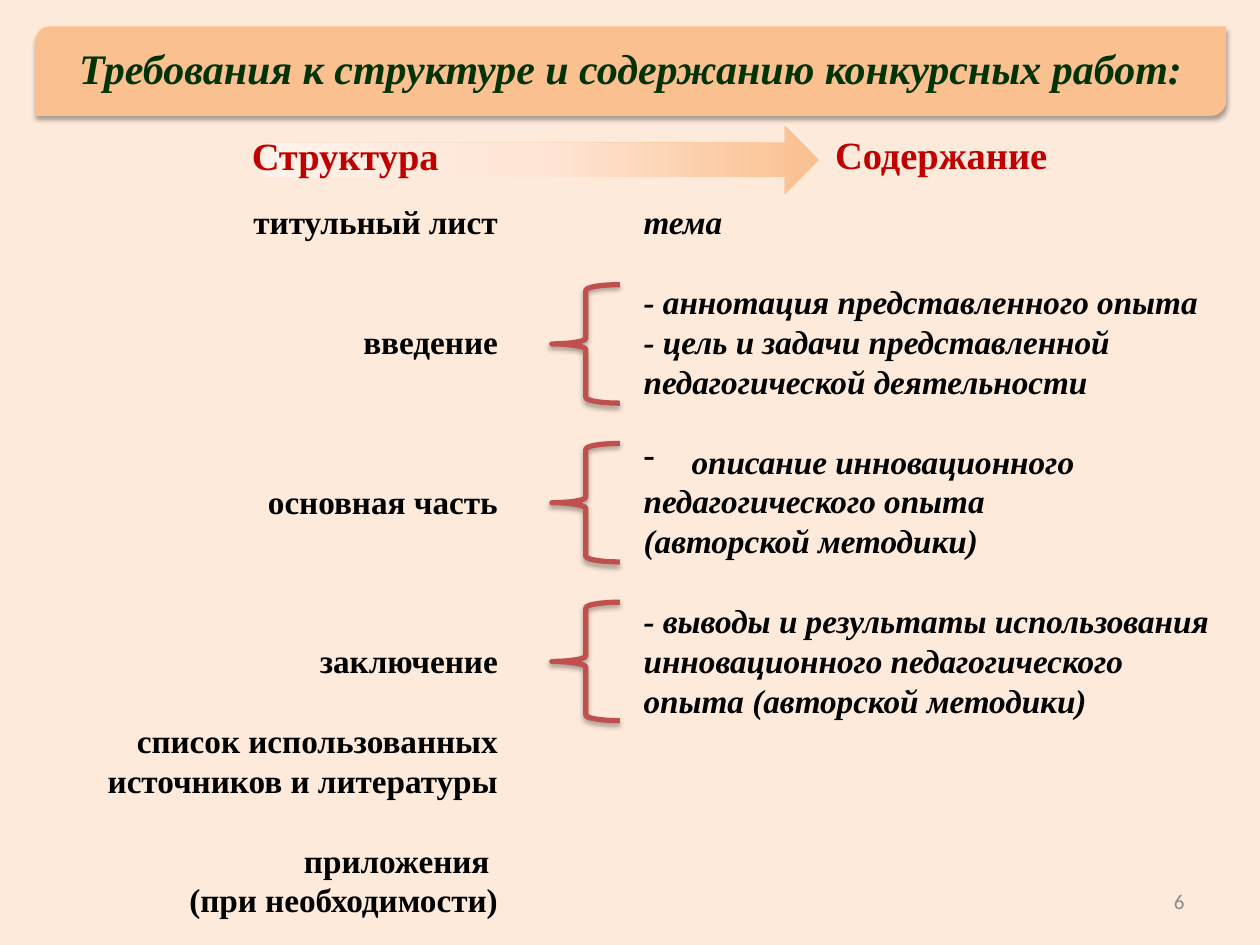
from dataclasses import dataclass

import lxml.etree
import pptx
import pptx.dml.color
import pptx.enum.shapes
import pptx.enum.text
import pptx.oxml
import pptx.oxml.ns
import pptx.util

Inches = pptx.util.Inches
Pt = pptx.util.Pt
RGBColor = pptx.dml.color.RGBColor
Shape = pptx.enum.shapes.MSO_SHAPE
Align = pptx.enum.text.PP_ALIGN
Anchor = pptx.enum.text.MSO_ANCHOR
qn = pptx.oxml.ns.qn

CREAM = RGBColor(0xFD, 0xEA, 0xDA)
PEACH = RGBColor(0xFA, 0xC0, 0x90)
BRICK = RGBColor(0xC0, 0x50, 0x4D)
RED = RGBColor(0xC0, 0x00, 0x00)
GREEN = RGBColor(0x00, 0x33, 0x00)
BLACK = RGBColor(0x00, 0x00, 0x00)
GREY = RGBColor(0x8C, 0x8C, 0x8C)
SERIF = "Times New Roman"
LINE_HEIGHT = 22.8
NAMESPACE = pptx.oxml.ns.nsdecls("a")


@dataclass
class Style:
    size: float
    color: RGBColor
    bold: bool = True
    italic: bool = False
    font: str = SERIF


@dataclass
class Line:
    text: str
    gap: int = 0  # empty lines above
    align: Align = Align.LEFT
    dash: bool = False


def place(item, left: float, top: float, width: float, height: float) -> None:
    item.left, item.top = Inches(left), Inches(top)
    item.width, item.height = Inches(width), Inches(height)


def add_span(para, text: str, style: Style) -> None:
    span = para.add_run()
    span.text = text
    span.font.name = style.font
    span.font.size = Pt(style.size)
    span.font.bold = style.bold
    span.font.italic = style.italic
    span.font.color.rgb = style.color


def fill_label(box, text: str, style: Style, align: Align = Align.CENTER,
               indent: float = 0, anchor: Anchor = Anchor.TOP) -> None:
    frame = box.text_frame
    frame.word_wrap = True
    frame.auto_size = pptx.enum.text.MSO_AUTO_SIZE.NONE
    frame.vertical_anchor = anchor
    para = frame.paragraphs[0]
    properties = para._p.get_or_add_pPr()
    properties.set("marL", "0")
    properties.set("indent", str(Inches(indent)))
    lxml.etree.SubElement(properties, qn("a:buNone"))
    para.alignment = align
    para.space_before = Pt(0)
    add_span(para, text, style)


def add_column(page, left: float, width: float, lines: list[Line], style: Style) -> None:
    box = page.shapes.add_textbox(Inches(left), Inches(1.55), Inches(width), Inches(4.65))
    frame = box.text_frame
    frame.word_wrap = True
    for number, line in enumerate(lines):
        para = frame.add_paragraph() if number else frame.paragraphs[0]
        if line.dash:
            properties = para._p.get_or_add_pPr()
            properties.set("marL", str(Inches(0.38)))
            properties.set("indent", str(-Inches(0.38)))
            lxml.etree.SubElement(properties, qn("a:buChar")).set("char", "-")
        para.alignment = line.align
        para.line_spacing = Pt(LINE_HEIGHT)
        if line.gap:
            para.space_before = Pt(line.gap * LINE_HEIGHT)
        add_span(para, line.text, style)


def add_shadow(shape) -> None:
    shape._element.spPr.append(pptx.oxml.parse_xml(
        f'<a:effectLst {NAMESPACE}><a:outerShdw blurRad="{Pt(3.1)}" dist="{Pt(1.8)}" '
        'dir="5400000" rotWithShape="0"><a:srgbClr val="000000"><a:alpha val="35000"/>'
        '</a:srgbClr></a:outerShdw></a:effectLst>'))


def add_arrow(page) -> None:
    arrow = page.shapes.add_shape(
        Shape.RIGHT_ARROW, Inches(2.09), Inches(1), Inches(4.41), Inches(0.54))
    stops = "".join(
        f'<a:gs pos="{position * 1000}"><a:srgbClr val="{color}"/></a:gs>'
        for position, color in ((0, PEACH), (50, "FFE5D5"), (100, "FFF2EA")))
    arrow._element.spPr.append(pptx.oxml.parse_xml(
        f'<a:gradFill {NAMESPACE} rotWithShape="1"><a:gsLst>{stops}</a:gsLst>'
        '<a:lin ang="10800000" scaled="0"/></a:gradFill>'))
    arrow.line.fill.background()
    arrow.shadow.inherit = False


def add_banner(page) -> None:
    banner = page.shapes.add_shape(
        Shape.ROUND_2_DIAG_RECTANGLE, Inches(0.28), Inches(0.21), Inches(9.45), Inches(0.71))
    banner.fill.solid()
    banner.fill.fore_color.rgb = PEACH
    banner.line.fill.background()
    add_shadow(banner)


def add_brace(page, top: float) -> None:
    brace = page.shapes.add_shape(
        Shape.LEFT_BRACE, Inches(4.38), Inches(top), Inches(0.54), Inches(0.94))
    brace.fill.background()
    brace.line.color.rgb = BRICK
    brace.line.width = Pt(3)
    add_shadow(brace)


STRUCTURE = [
    Line(text, gap, Align.RIGHT) for text, gap in (
        ("титульный лист", 0),
        ("введение", 2),
        ("основная часть", 3),
        ("заключение", 3),
        ("список использованных источников и литературы", 1),
        ("приложения ", 1),
        ("(при необходимости)", 0),
    )
]
CONTENT = [
    Line("тема"),
    Line("- аннотация представленного опыта", 1),
    Line("- цель и задачи представленной педагогической деятельности"),
    Line("описание инновационного", 1, dash=True),
    Line("педагогического опыта ", align=Align.JUSTIFY),
    Line("(авторской методики)"),
    Line("- выводы и результаты использования инновационного педагогического "
         "опыта (авторской методики)", 1),
]


def main() -> None:
    deck = pptx.Presentation()
    deck.slide_width, deck.slide_height = Inches(10), Inches(7.5)
    page = deck.slides.add_slide(deck.slide_layouts[1])
    page.background.fill.solid()
    page.background.fill.fore_color.rgb = CREAM
    title, heading = page.placeholders[0], page.placeholders[1]

    # Arrow and banner, kept behind the placeholders
    add_arrow(page)
    add_banner(page)
    for placeholder in (title, heading):
        page.shapes._spTree.append(placeholder._element)

    # Heading and column captions
    caption = Style(22, RED)
    place(title, 5.01, 0.99, 4.72, 0.47)
    fill_label(title, "Содержание", caption, indent=0.2)
    place(heading, 0.28, 0.29, 9.45, 0.55)
    fill_label(heading, "Требования к структуре и содержанию конкурсных работ:",
               Style(24, GREEN, italic=True))
    structure = page.shapes.add_textbox(Inches(0.28), Inches(1), Inches(4.72), Inches(0.47))
    fill_label(structure, "Структура", caption, indent=0.2)

    # Columns joined by braces
    add_column(page, 0.59, 3.46, STRUCTURE, Style(19, BLACK))
    add_column(page, 5.01, 4.72, CONTENT, Style(19, BLACK, italic=True))
    for row in range(3):
        add_brace(page, 2.26 + 1.26 * row)

    # Page number
    number = page.shapes.add_textbox(Inches(7.17), Inches(6.95), Inches(2.33), Inches(0.4))
    fill_label(number, "6", Style(12, GREY, bold=False, font="Calibri"),
               Align.RIGHT, anchor=Anchor.MIDDLE)

    deck.save("out.pptx")


if __name__ == "__main__":
    main()
